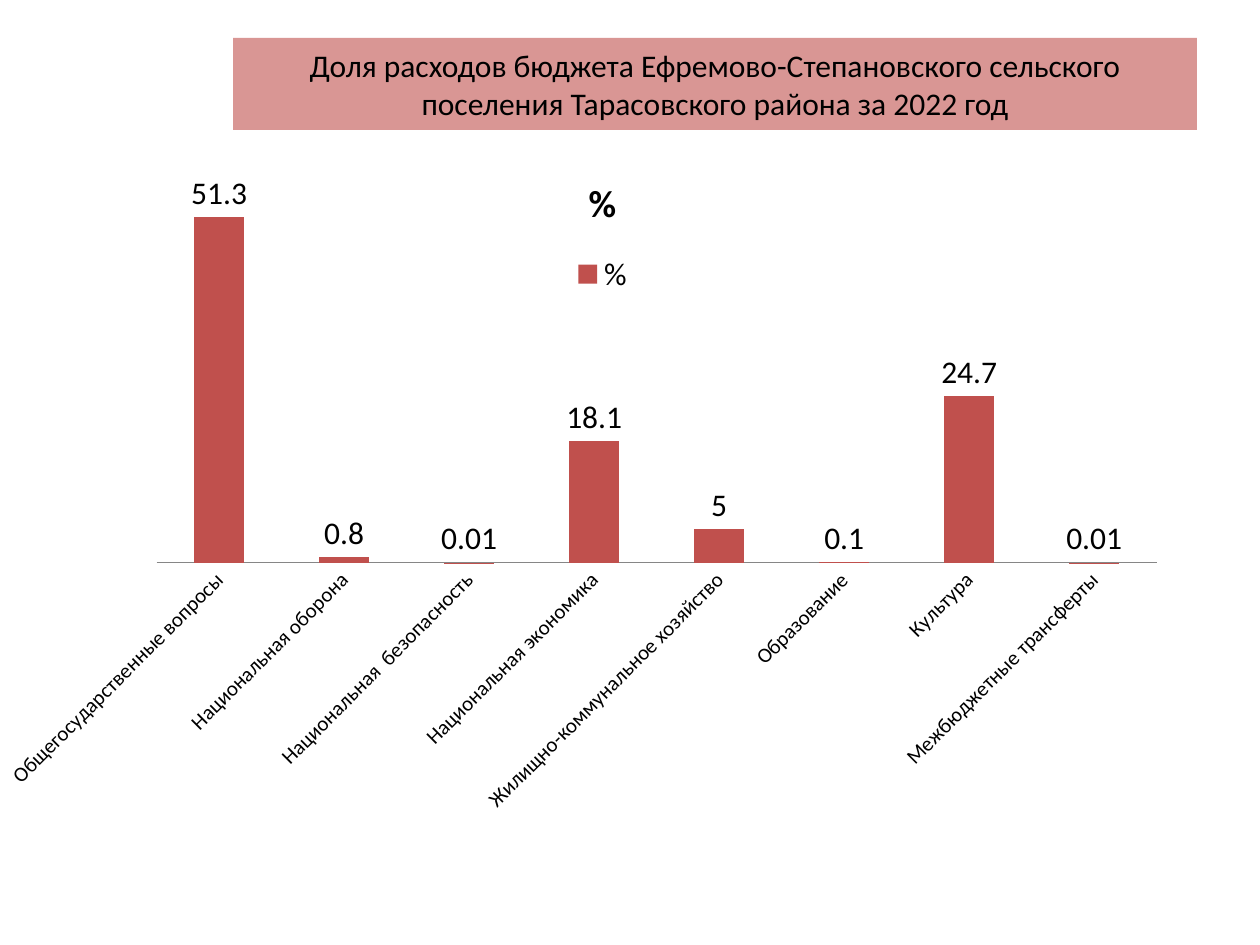
from lxml import etree
from pptx import Presentation
from pptx.chart.data import CategoryChartData
from pptx.dml.color import RGBColor
from pptx.enum import chart as charts, shapes, text
from pptx.oxml import ns

PX = 7257.14  # EMU per px at 126 px to the inch
THEME = {
    "font": "Calibri",
    "ink": RGBColor.from_string("000000"),
    "banner": RGBColor.from_string("D99694"),
    "bars": RGBColor.from_string("C0504D"),
    "axis": RGBColor.from_string("868686"),
    "body": 18,
    "category": 12,
    "heading": 21.6,
}


def px(*lengths):
    return [round(length * PX) for length in lengths]


def style(font, size, bold=False):
    formats = {"name": THEME["font"], "size": round(size * 12700), "bold": bold}
    for attribute, value in formats.items():
        setattr(font, attribute, value)
    font.color.rgb = THEME["ink"]


deck = Presentation()
deck.slide_width, deck.slide_height = px(1260, 945)
slide = deck.slides.add_slide(deck.slide_layouts[6])

# Heading banner
banner = slide.shapes.add_shape(shapes.MSO_SHAPE.RECTANGLE, *px(233, 38, 964, 92))
banner.shadow.inherit = False
banner.fill.solid()
banner.fill.fore_color.rgb = THEME["banner"]
banner.line.fill.background()
banner.text_frame.word_wrap = True
banner.text_frame.vertical_anchor = text.MSO_ANCHOR.MIDDLE
heading = banner.text_frame.paragraphs[0]
heading.alignment = text.PP_ALIGN.CENTER
heading_run = heading.add_run()
heading_run.text = (
    "Доля расходов бюджета Ефремово-Степановского сельского "
    "поселения Тарасовского района за 2022 год"
)
style(heading_run.font, THEME["body"])

# Budget shares
shares = {
    "Общегосударственные вопросы": 51.3,
    "Национальная оборона": 0.8,
    "Национальная  безопасность": 0.01,
    "Национальная экономика": 18.1,
    "Жилищно-коммунальное хозяйство": 5,
    "Образование": 0.1,
    "Культура": 24.7,
    "Межбюджетные трансферты": 0.01,
}
budget = CategoryChartData()
budget.categories = list(shares)
budget.add_series("%", list(shares.values()))
spending = slide.shapes.add_chart(
    charts.XL_CHART_TYPE.COLUMN_CLUSTERED, *px(0, 147, 1205, 798), budget
).chart
style(spending.font, THEME["body"])

# Chart title and legend
spending.has_title = True
spending.chart_title.include_in_layout = False
spending.chart_title.text_frame.text = "%"
style(spending.chart_title.text_frame.paragraphs[0].runs[0].font, THEME["heading"], True)
spending.has_legend = True
spending.legend.position = charts.XL_LEGEND_POSITION.TOP
spending.legend.include_in_layout = False
style(spending.legend.font, THEME["body"])

# Columns and their values
columns = spending.plots[0]
columns.gap_width = 150
columns.vary_by_categories = False
bars = columns.series[0]
bars.invert_if_negative = False
bars.format.fill.solid()
bars.format.fill.fore_color.rgb = THEME["bars"]
columns.has_data_labels = True
values = columns.data_labels
values.show_value = True
values.position = charts.XL_LABEL_POSITION.OUTSIDE_END
style(values.font, THEME["body"])

# Axes
percent_axis = spending.value_axis
percent_scale = {
    "minimum_scale": 0,
    "maximum_scale": 60,
    "has_major_gridlines": False,
    "visible": False,
}
for attribute, value in percent_scale.items():
    setattr(percent_axis, attribute, value)
category_axis = spending.category_axis
category_axis.major_tick_mark = charts.XL_TICK_MARK.NONE
category_axis.format.line.color.rgb = THEME["axis"]
style(category_axis.tick_labels.font, THEME["category"])
label_body = category_axis._element.find(ns.qn("c:txPr")).find(ns.qn("a:bodyPr"))
label_body.set("rot", "-2700000")

# Inner plot area
plot_area = spending._chartSpace.chart.plotArea
for old_layout in plot_area.findall(ns.qn("c:layout")):
    plot_area.remove(old_layout)
layout = etree.Element(ns.qn("c:layout"))
manual = etree.SubElement(layout, ns.qn("c:manualLayout"))
placement = {
    "layoutTarget": "inner", "xMode": "edge", "yMode": "edge",
    "x": 0.13, "y": 0.015, "w": 0.83, "h": 0.506,
}
for tag, value in placement.items():
    etree.SubElement(manual, ns.qn(f"c:{tag}")).set("val", str(value))
plot_area.insert(0, layout)

deck.save("out.pptx")
